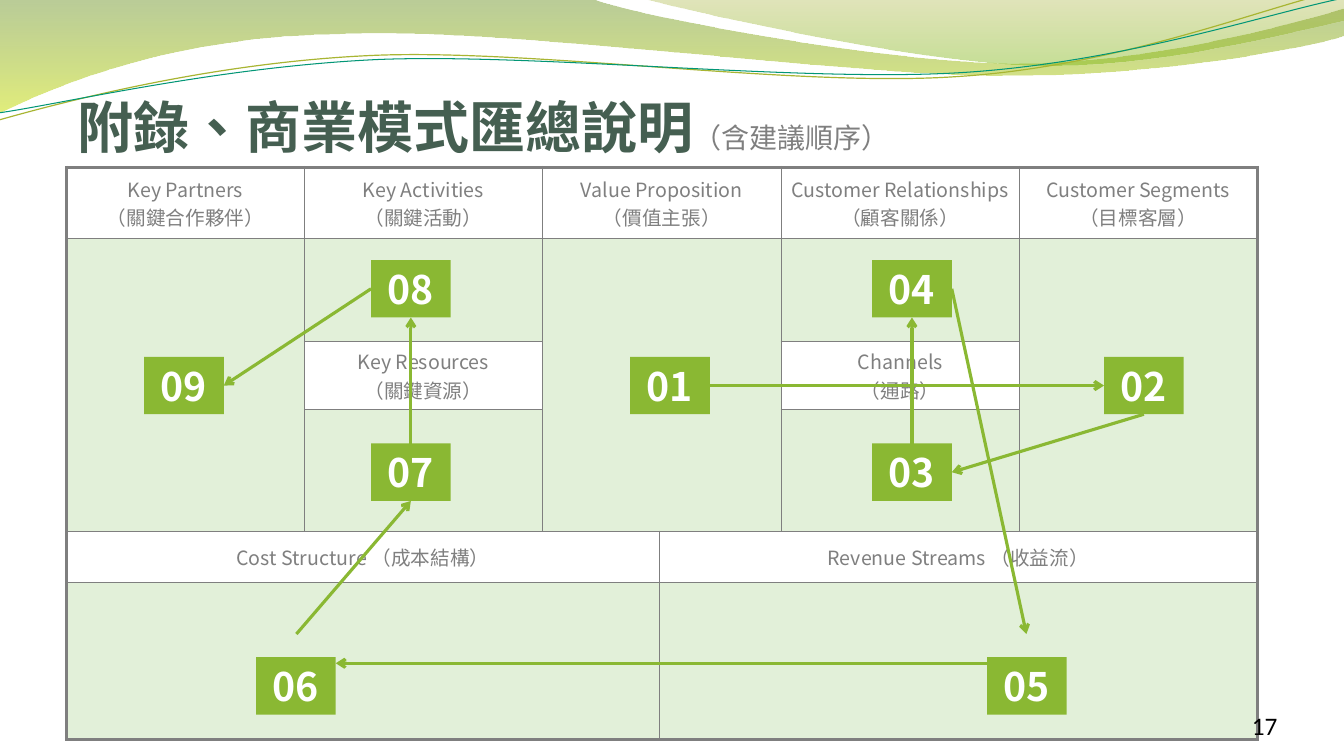
import pptx
import pptx.dml.color
import pptx.enum.shapes
import pptx.enum.text
import pptx.oxml.ns
import pptx.util
from lxml import etree

RGB = pptx.dml.color.RGBColor
ALIGN = pptx.enum.text.PP_ALIGN
ANCHOR = pptx.enum.text.MSO_ANCHOR
inch, qn = pptx.util.Inches, pptx.oxml.ns.qn

LEAF, MINT, WHITE = RGB(0x8A, 0xB8, 0x33), RGB(0xE2, 0xF0, 0xD9), RGB(0xFF, 0xFF, 0xFF)
GREY, PINE, BLACK = RGB(0x7F, 0x7F, 0x7F), RGB(0x45, 0x5F, 0x51), RGB(0, 0, 0)
MOSS, LIME = RGB(0x66, 0x8F, 0x1B), RGB(0xCA, 0xE0, 0x0E)
OLIVE, GRASS = RGB(0x99, 0xA7, 0x19), RGB(0x80, 0xB8, 0x14)
GOLD, TEAL = RGB(0xA8, 0xB5, 0x32), RGB(0x02, 0x96, 0x76)
TC, SC = "Noto Sans CJK TC", "Noto Sans CJK SC"

# Header waves: a segment is an end point, or two control points and an end point
BANDS = [  # start, segments, gradient stops (colour, opacity %)
    ((0, 0), [(5.87, -0.01), (6.34, 0.17, 8.84, 0.63, 10.11, 0.63),
              (11.37, 0.63, 12.77, 0.26, 13.33, 0.09), (13.34, 0.36),
              (13.11, 0.44, 11.59, 0.76, 9.94, 0.75), (8.29, 0.75, 5.09, 0.28, 3.43, 0.34),
              (1.72, 0.36, 0.61, 0.83, -0.02, 1.13)], [(MOSS, 45), (LIME, 55)]),
    ((6.38, -0.01), [(6.79, 0.11, 9.09, 0.62, 10.25, 0.65), (11.4, 0.69, 12.82, 0.32, 13.33, 0.21),
                     (13.33, 0)], [(OLIVE, 30), (GRASS, 45)]),
]
STRANDS = [  # start, segments, colour, width
    ((-0.01, 1.19), [(0.63, 1.01, 2.1, 0.62, 3.69, 0.55), (5.27, 0.48, 7.89, 0.87, 9.49, 0.76),
                     (11.1, 0.66, 12.51, 0.08, 13.3, -0.1)], GOLD, 0.85),
    ((-0.01, 1.12), [(0.62, 1.03, 2.18, 0.66, 3.77, 0.59), (5.37, 0.53, 7.96, 0.82, 9.55, 0.72),
                     (11.14, 0.62, 12.55, 0.14, 13.33, -0.02)], TEAL, 0.75),
]

TITLE = [("附錄、商業模式匯總說明", 40, PINE, True), ("（含建議順序）", 20, GREY, False)]

# Canvas table
COLUMNS = [2.36, 2.36, 1.16, 1.21, 2.36, 2.36]
ROWS = [0.71, 1.02, 0.67, 1.21, 0.51, 1.56]
BLOCKS = [  # row, column, row span, column span, heading lines
    (0, 0, 1, 1, ["Key Partners", "（關鍵合作夥伴）"]),
    (0, 1, 1, 1, ["Key Activities", "（關鍵活動）"]),
    (0, 2, 1, 2, ["Value Proposition", "（價值主張）"]),
    (0, 4, 1, 1, ["Customer Relationships", "（顧客關係）"]),
    (0, 5, 1, 1, ["Customer Segments", "（目標客層）"]),
    (1, 0, 3, 1, []), (1, 1, 1, 1, []), (1, 2, 3, 2, []), (1, 4, 1, 1, []), (1, 5, 3, 1, []),
    (2, 1, 1, 1, ["Key Resources", "（關鍵資源）"]),
    (2, 4, 1, 1, ["Channels", "（通路）"]),
    (3, 1, 1, 1, []), (3, 4, 1, 1, []),
    (4, 0, 1, 3, ["Cost Structure （成本結構）"]),
    (4, 3, 1, 3, ["Revenue Streams （收益流）"]),
    (5, 0, 1, 3, []), (5, 3, 1, 3, []),
]

# Numbered steps, placed on shared heights
STEP_W, STEP_H = 0.79, 0.57
HIGH, MIDDLE, LOW, BASE = 2.58, 3.54, 4.4, 6.52
STEPS = {"01": (6.25, MIDDLE), "02": (10.95, MIDDLE), "03": (8.65, LOW), "04": (8.65, HIGH),
         "05": (9.79, BASE), "06": (2.54, BASE), "07": (3.68, LOW), "08": (3.68, HIGH),
         "09": (1.43, MIDDLE)}
TOP, LEFT, BOTTOM, RIGHT = range(4)
ARROWS = [  # an end is a step and its side, or a free point
    (("01", RIGHT), ("02", LEFT)), (("02", BOTTOM), ("03", RIGHT)),
    (("03", TOP), ("04", BOTTOM)), (("04", RIGHT), (10.18, 6.29)),
    ((9.79, 6.58), (3.33, 6.58)), ((2.94, 6.29), ("07", BOTTOM)),
    (("07", TOP), ("08", BOTTOM)), (("08", LEFT), ("09", RIGHT)),
]

deck = pptx.Presentation()
deck.slide_width, deck.slide_height = inch(13.33), inch(7.5)
slide = deck.slides.add_slide(deck.slide_layouts[6])


def add_run(paragraph, text, size, font, colour, bold=False):
    run = paragraph.add_run()
    run.text = text
    run.font.size, run.font.bold, run.font.name = pptx.util.Pt(size), bold, font
    run.font.color.rgb = colour
    run.font._element.set("lang", "zh-TW")
    etree.SubElement(run.font._element, qn("a:ea"), typeface=font)


def set_frame(frame, anchor, margins=(0, 0, 0, 0)):
    frame.word_wrap, frame.vertical_anchor = True, anchor
    (frame.margin_left, frame.margin_top,
     frame.margin_right, frame.margin_bottom) = map(inch, margins)


def trace(start, segments, closed):
    builder = slide.shapes.build_freeform(inch(start[0]), inch(start[1]))
    builder.add_line_segments([(inch(s[-2]), inch(s[-1])) for s in segments], close=closed)
    wave = builder.convert_to_shape()
    wave.shadow.inherit = False
    # Turn each segment that has control points into a cubic curve
    for side, segment in zip(list(wave._element.iter(qn("a:lnTo"))), segments):
        if len(segment) == 6:
            curve = etree.Element(qn("a:cubicBezTo"))
            for x, y in zip(segment[::2], segment[1::2]):
                etree.SubElement(curve, qn("a:pt"), x=str(inch(x) - wave.left),
                                 y=str(inch(y) - wave.top))
            side.getparent().replace(side, curve)
    return wave


# Header waves
for start, segments, stops in BANDS:
    band = trace(start, segments, True)
    band.line.fill.background()
    band.fill.gradient()
    band.fill.gradient_angle = 270
    for stop, (colour, _), position in zip(band.fill.gradient_stops, stops, (0, 1)):
        stop.color.rgb, stop.position = colour, position
    for tint, (_, opacity) in zip(band._element.spPr.iter(qn("a:srgbClr")), stops):
        etree.SubElement(tint, qn("a:alpha"), val=str(opacity * 1000))
for start, segments, colour, width in STRANDS:
    strand = trace(start, segments, False)
    strand.fill.background()
    strand.line.color.rgb, strand.line.width = colour, pptx.util.Pt(width)

# Title
title = slide.shapes.add_textbox(inch(0.77), inch(0.72), inch(12), inch(0.86)).text_frame
set_frame(title, ANCHOR.BOTTOM, (0, 0.05, 0, 0))
for text, size, colour, bold in TITLE:
    add_run(title.paragraphs[0], text, size, TC, colour, bold)

# Canvas table: thick outer frame, thin inner lines
canvas = slide.shapes.add_table(len(ROWS), len(COLUMNS), inch(0.66), inch(1.66),
                                inch(sum(COLUMNS)), inch(sum(ROWS))).table
canvas.first_row = canvas.horz_banding = False
for column, width in zip(canvas.columns, COLUMNS):
    column.width = inch(width)
for row, height in zip(canvas.rows, ROWS):
    row.height = inch(height)
for top, left, down, across, heading in BLOCKS:
    bottom, right = top + down - 1, left + across - 1
    block = canvas.cell(top, left)
    if down * across > 1:
        block.merge(canvas.cell(bottom, right))
    outer_edges = [("a:lnL", left == 0), ("a:lnR", right == len(COLUMNS) - 1),
                   ("a:lnT", top == 0), ("a:lnB", bottom == len(ROWS) - 1)]
    for r in range(top, bottom + 1):
        for c in range(left, right + 1):
            cell = canvas.cell(r, c)
            at_edge = [c == left, c == right, r == top, r == bottom]
            for (tag, outer), touching in zip(outer_edges, at_edge):
                if touching or (r, c) == (top, left):
                    border = etree.SubElement(cell._tc.get_or_add_tcPr(), qn(tag),
                                              w=str(pptx.util.Pt(2.25 if outer else 1)))
                    paint = etree.SubElement(border, qn("a:solidFill"))
                    etree.SubElement(paint, qn("a:srgbClr"), val=str(GREY))
            cell.fill.solid()
            cell.fill.fore_color.rgb = WHITE if heading else MINT
    block.vertical_anchor = ANCHOR.MIDDLE
    block.margin_left = block.margin_right = inch(0.07)
    block.margin_top = block.margin_bottom = inch(0.04)
    for i, line in enumerate(heading):
        paragraph = block.text_frame.add_paragraph() if i else block.text_frame.paragraphs[0]
        paragraph.alignment = ALIGN.CENTER
        add_run(paragraph, line, 14, TC, GREY)

# Numbered steps
tiles = {}
for number, (x, y) in STEPS.items():
    tile = tiles[number] = slide.shapes.add_shape(
        pptx.enum.shapes.MSO_SHAPE.RECTANGLE, inch(x), inch(y), inch(STEP_W), inch(STEP_H))
    tile.shadow.inherit = False
    tile.fill.solid()
    tile.fill.fore_color.rgb = LEAF
    tile.line.fill.background()
    set_frame(tile.text_frame, ANCHOR.MIDDLE, (0.1, 0, 0.1, 0))
    tile.text_frame.paragraphs[0].alignment = ALIGN.CENTER
    add_run(tile.text_frame.paragraphs[0], number, 28, SC, WHITE, True)

# Arrows in the suggested order
for start, end in ARROWS:
    free = [(0, 0) if point[0] in tiles else point for point in (start, end)]
    arrow = slide.shapes.add_connector(pptx.enum.shapes.MSO_CONNECTOR.STRAIGHT,
                                       *(inch(v) for point in free for v in point))
    for point, join in ((start, arrow.begin_connect), (end, arrow.end_connect)):
        if point[0] in tiles:
            join(tiles[point[0]], point[1])
    arrow.line.color.rgb, arrow.line.width = LEAF, pptx.util.Pt(2.25)
    etree.SubElement(arrow.line._get_or_add_ln(), qn("a:tailEnd"), type="arrow")
    etree.SubElement(arrow._element.spPr, qn("a:effectLst"))

# Page number
page = slide.shapes.add_textbox(inch(11.56), inch(6.95), inch(1.11), inch(0.4)).text_frame
set_frame(page, ANCHOR.BOTTOM)
page.paragraphs[0].alignment = ALIGN.RIGHT
add_run(page.paragraphs[0], "17", 18, "Calibri", BLACK)

deck.save("out.pptx")
